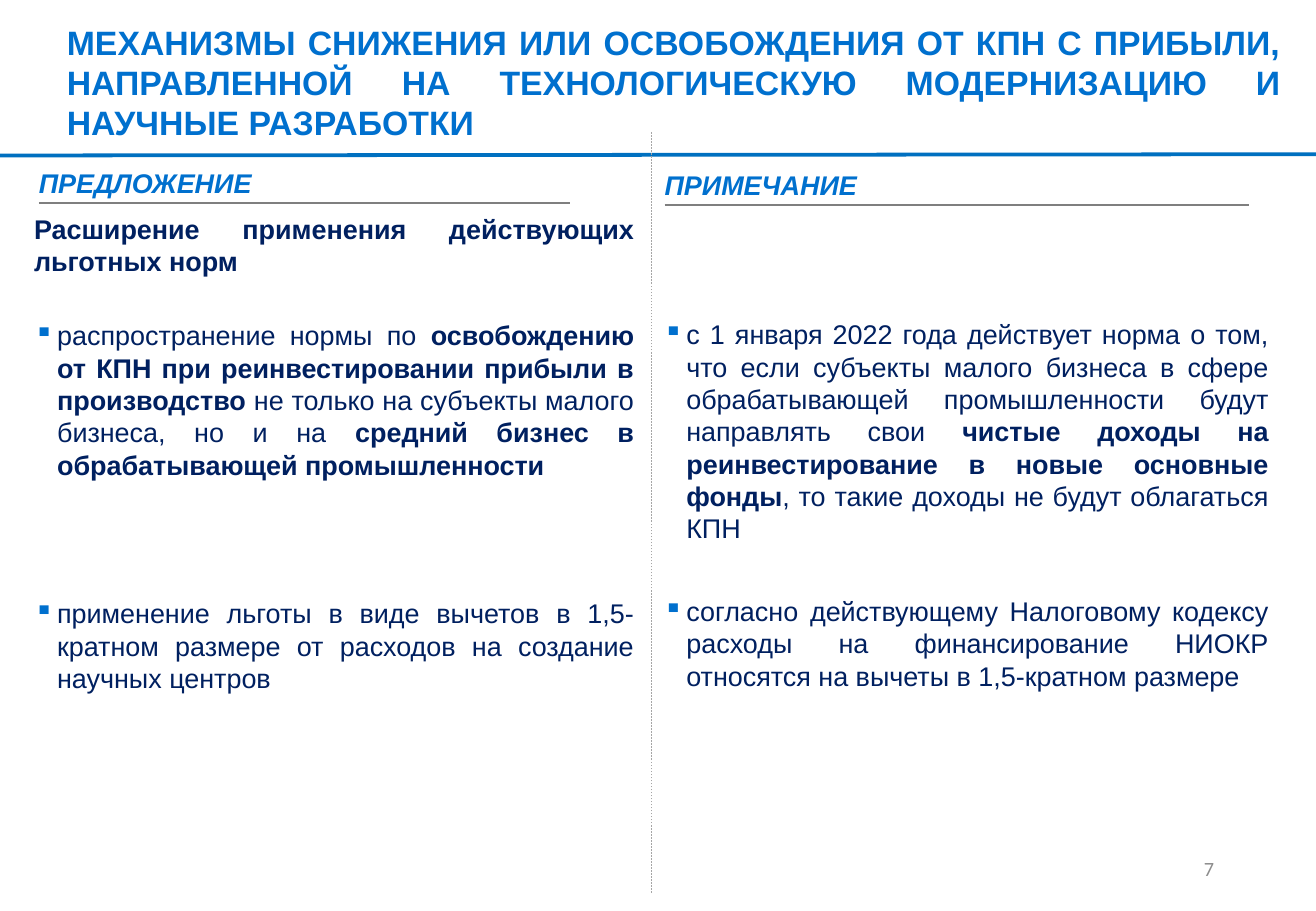
from lxml import etree
from pptx import Presentation
from pptx.dml.color import RGBColor
from pptx.enum.dml import MSO_LINE
from pptx.enum.shapes import MSO_CONNECTOR
from pptx.enum.text import MSO_ANCHOR, MSO_AUTO_SIZE, PP_ALIGN
from pptx.oxml.ns import qn
from pptx.util import Inches, Pt

STRAIGHT = MSO_CONNECTOR.STRAIGHT
DASH = MSO_LINE.DASH
TOP, MIDDLE, BOTTOM = MSO_ANCHOR.TOP, MSO_ANCHOR.MIDDLE, MSO_ANCHOR.BOTTOM
LEFT, RIGHT, JUSTIFY = PP_ALIGN.LEFT, PP_ALIGN.RIGHT, PP_ALIGN.JUSTIFY


class Theme:
    font = "Arial"
    number_font = "Calibri"
    accent = RGBColor.from_string("0070CE")
    rule = RGBColor.from_string("0070C0")
    body = RGBColor.from_string("002060")
    gray = RGBColor.from_string("7F7F7F")
    pale = RGBColor.from_string("A6A6A6")
    number = RGBColor.from_string("8C8C8C")
    title_size, body_size, number_size = 20, 16, 12
    line_spacing = 1.195
    indent = Inches(0.19)


TITLE = ("МЕХАНИЗМЫ СНИЖЕНИЯ ИЛИ ОСВОБОЖДЕНИЯ ОТ КПН С ПРИБЫЛИ, НАПРАВЛЕННОЙ "
         "НА ТЕХНОЛОГИЧЕСКУЮ МОДЕРНИЗАЦИЮ И НАУЧНЫЕ РАЗРАБОТКИ")
PAGE_NUMBER = "7"

# Boxes are left, top, width, height in percent of the slide.
TITLE_BOX = (5.08, 4.27, 92.24, 9.47)
NUMBER_BOX = (70.64, 92.67, 22.53, 5.33)

# Paragraphs: runs as (text, bold), bulleted, space after in points.
COLUMNS = [
    {
        "heading": "ПРЕДЛОЖЕНИЕ",
        "heading_box": (2.95, 18.27, 40.54, 3.73),
        "underline": (2.95, 22.27, 43.31, 22.27),
        "body_box": (2.59, 22.93, 45.61, 53.6),
        "inset": 0,
        "anchor": MIDDLE,
        "paragraphs": [
            ([("Расширение применения действующих льготных норм", True)], False, 25),
            ([("распространение нормы по ", False),
              ("освобождению от КПН при реинвестировании прибыли в производство ", True),
              ("не только на субъекты малого бизнеса, но и на ", False),
              ("средний бизнес в обрабатывающей промышленности", True)], True, 69),
            ([("применение льготы в виде вычетов в 1,5-кратном размере от расходов "
               "на создание научных центров", False)], True, 3),
        ],
    },
    {
        "heading": "ПРИМЕЧАНИЕ",
        "heading_box": (50.51, 18.4, 44.51, 3.73),
        "underline": (50.51, 22.53, 94.92, 22.53),
        "body_box": (49.49, 34.27, 47.83, 51.2),
        "inset": 0.1,
        "anchor": TOP,
        "paragraphs": [
            ([("с 1 января 2022 года действует норма о том, что если субъекты малого "
               "бизнеса в сфере обрабатывающей промышленности будут направлять свои ", False),
              ("чистые доходы на реинвестирование в новые основные фонды", True),
              (", то такие доходы не будут облагаться КПН", False)], True, 30),
            ([("согласно действующему Налоговому кодексу расходы на финансирование "
               "НИОКР относятся на вычеты в 1,5-кратном размере", False)], True, 3),
        ],
    },
]

# Rules: start and end in percent of the slide, colour, width, dash.
RULES = [
    ((0, 17.07, 100, 16.93), Theme.rule, 2.25, None),
    *((column["underline"], Theme.gray, 1, None) for column in COLUMNS),
    ((49.49, 98, 49.49, 14.4), Theme.pale, 0.25, DASH),
]

presentation = Presentation()
presentation.slide_width, presentation.slide_height = Inches(10.83), Inches(7.5)
slide = presentation.slides.add_slide(presentation.slide_layouts[5])


def to_lengths(shares):
    sides = (presentation.slide_width, presentation.slide_height) * 2
    return [int(side * share / 100) for side, share in zip(sides, shares)]


def set_frame(shape, anchor, insets):
    frame = shape.text_frame
    frame.word_wrap = True
    frame.auto_size = MSO_AUTO_SIZE.NONE
    frame.vertical_anchor = anchor
    (frame.margin_left, frame.margin_top,
     frame.margin_right, frame.margin_bottom) = map(Inches, insets)
    return frame


def add_frame(box, anchor, insets):
    return set_frame(slide.shapes.add_textbox(*to_lengths(box)), anchor, insets)


def style(paragraph, size, color, align, bold=None, italic=None, font=Theme.font):
    paragraph.alignment = align
    paragraph.font.name, paragraph.font.size = font, Pt(size)
    paragraph.font.color.rgb = color
    paragraph.font.bold, paragraph.font.italic = bold, italic


def add_bullet(paragraph):
    properties = paragraph._p.get_or_add_pPr()
    properties.set("marL", str(Theme.indent))
    properties.set("indent", str(-Theme.indent))
    color = etree.Element(qn("a:buClr"))
    etree.SubElement(color, qn("a:srgbClr")).set("val", str(Theme.accent))
    character = etree.Element(qn("a:buChar"))
    character.set("char", "▪")
    run_defaults = properties.find(qn("a:defRPr"))
    run_defaults.addprevious(color)
    run_defaults.addprevious(character)


def add_rule(ends, color, width, dash):
    connector = slide.shapes.add_connector(STRAIGHT, *to_lengths(ends))
    connector.line.color.rgb = color
    connector.line.width = Pt(width)
    if dash is not None:
        connector.line.dash_style = dash
    etree.SubElement(connector._element.spPr, qn("a:effectLst"))


def add_column(column):
    heading = add_frame(column["heading_box"], BOTTOM, (0, 0, 0, 0.01)).paragraphs[0]
    heading.text = column["heading"]
    style(heading, Theme.body_size, Theme.accent, LEFT, bold=True, italic=True)

    inset = column["inset"]
    frame = add_frame(column["body_box"], column["anchor"], (inset, inset / 2) * 2)
    for index, (runs, bulleted, space_after) in enumerate(column["paragraphs"]):
        paragraph = frame.add_paragraph() if index else frame.paragraphs[0]
        style(paragraph, Theme.body_size, Theme.body, JUSTIFY)
        paragraph.line_spacing = Pt(Theme.body_size * Theme.line_spacing)
        paragraph.space_after = Pt(space_after)
        if bulleted:
            add_bullet(paragraph)
        for text, bold in runs:
            run = paragraph.add_run()
            run.text, run.font.bold = text, bold


title = slide.shapes.title
title.left, title.top, title.width, title.height = to_lengths(TITLE_BOX)
title_paragraph = set_frame(title, MIDDLE, (0, 0, 0, 0)).paragraphs[0]
title_paragraph.text = TITLE
style(title_paragraph, Theme.title_size, Theme.accent, JUSTIFY, bold=True)
title_paragraph.line_spacing = Pt(Theme.title_size * Theme.line_spacing)

for rule in RULES:
    add_rule(*rule)
for column in COLUMNS:
    add_column(column)

number = add_frame(NUMBER_BOX, MIDDLE, (0.1, 0.05, 0.1, 0.05)).paragraphs[0]
number.text = PAGE_NUMBER
style(number, Theme.number_size, Theme.number, RIGHT, font=Theme.number_font)

presentation.save("out.pptx")
